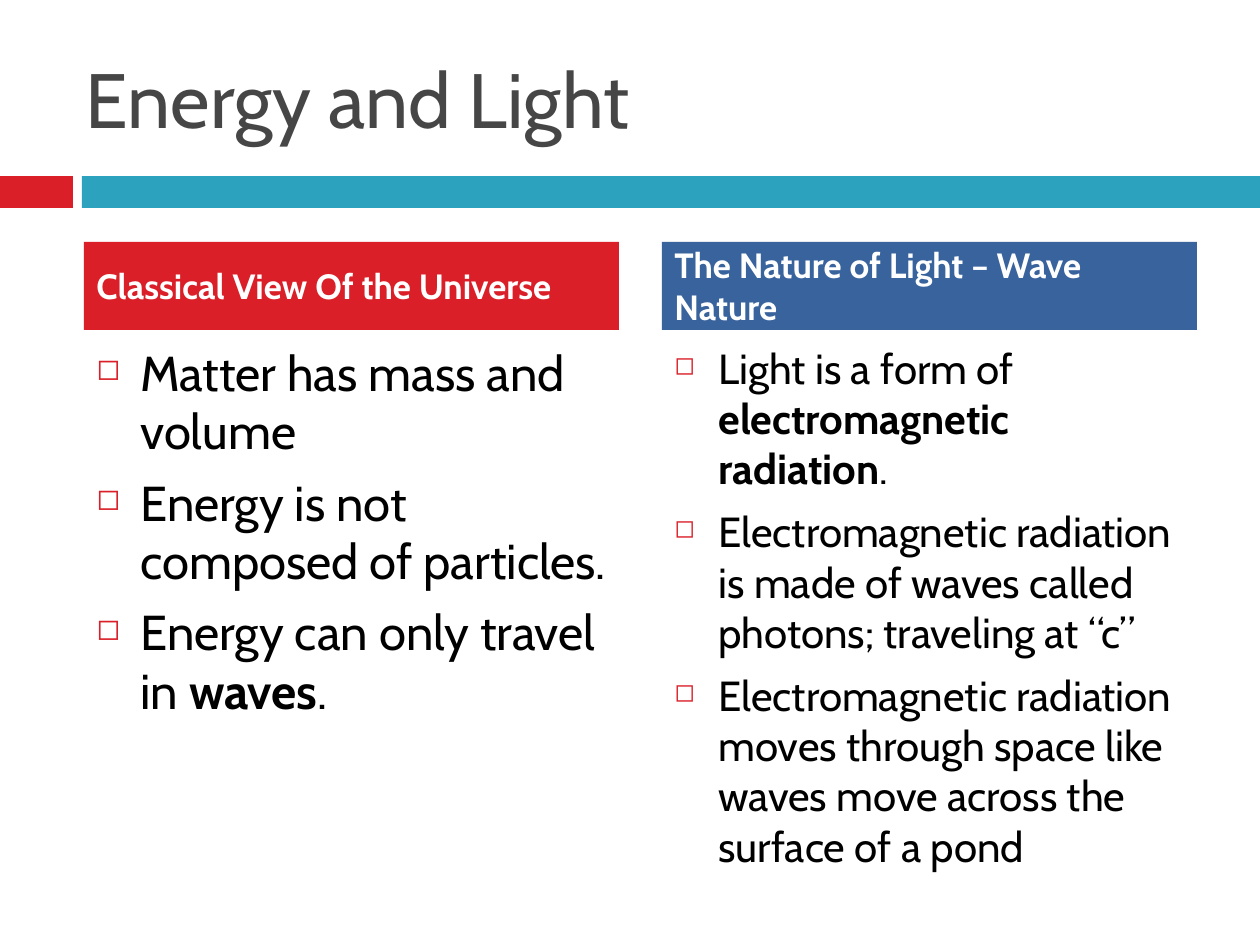
from dataclasses import dataclass

from lxml import etree
from pptx import Presentation
from pptx.dml.color import RGBColor
from pptx.enum.shapes import MSO_SHAPE
from pptx.enum.text import MSO_ANCHOR, MSO_AUTO_SIZE, PP_ALIGN
from pptx.oxml.ns import qn
from pptx.util import Emu, Pt

RECTANGLE = MSO_SHAPE.RECTANGLE
TOP, MIDDLE = MSO_ANCHOR.TOP, MSO_ANCHOR.MIDDLE
LEFT = PP_ALIGN.LEFT
NO_AUTOFIT = MSO_AUTO_SIZE.NONE
EMU_PER_INCH, PX_PER_INCH = 914400, 126
TITLE_ONLY = 5


@dataclass(frozen=True)
class Theme:
    font: str = "Cabin"
    red: str = "DA1F28"
    teal: str = "2DA2BF"
    blue: str = "39639D"
    gray: str = "464646"
    black: str = "000000"
    white: str = "FFFFFF"
    title_size: int = 44
    heading_size: int = 20
    space_before: int = 7
    bullet: str = "◻"
    bullet_percent: int = 60


@dataclass(frozen=True)
class Box:
    left: int
    top: int
    width: int
    height: int


@dataclass(frozen=True)
class Span:
    text: str
    bold: bool = False


@dataclass(frozen=True)
class Column:
    left: int
    heading: str
    color: str
    size: int
    points: list[list[Span]]


THEME = Theme()
SLIDE_WIDTH, SLIDE_HEIGHT = 1260, 945
TITLE_BOX = Box(73, 38, 1124, 120)
BAND_TOP, BAND_HEIGHT = 176, 32
BAND_SPLIT, BAND_GAP = 73, 9
COLUMN_WIDTH = 535
HEADING_TOP, HEADING_HEIGHT = 242, 88
BODY_TOP, BODY_HEIGHT = 336, 494
INDENT = 44

COLUMNS = [
    Column(84, "Classical View Of the Universe", THEME.red, 28, [
        [Span("Matter has mass and volume")],
        [Span("Energy is not composed of particles.")],
        [Span("Energy can only travel in "), Span("waves", True), Span(".")],
    ]),
    Column(662, "The Nature of Light – Wave Nature", THEME.blue, 24, [
        [Span("Light is a form of "), Span("electromagnetic radiation", True), Span(".")],
        [Span("Electromagnetic radiation is made of waves called photons; traveling at “c”")],
        [Span("Electromagnetic radiation moves through space like waves move across "
              "the surface of a pond")],
    ]),
]


def px(length: int) -> Emu:
    return Emu(round(length * EMU_PER_INCH / PX_PER_INCH))


def frame(box: Box) -> tuple[Emu, Emu, Emu, Emu]:
    return px(box.left), px(box.top), px(box.width), px(box.height)


def prepare_text(text_frame, anchor) -> None:
    text_frame.word_wrap = True
    text_frame.auto_size = NO_AUTOFIT
    text_frame.vertical_anchor = anchor


def style_paragraph(para, size: int, color: str, bold: bool = False) -> None:
    para.alignment = LEFT
    para.font.name = THEME.font
    para.font.size = Pt(size)
    para.font.bold = bold
    para.font.color.rgb = RGBColor.from_string(color)


def add_bullet(para) -> None:
    properties = para._p.get_or_add_pPr()
    properties.set("marL", str(px(INDENT)))
    properties.set("indent", str(-px(INDENT)))
    bullet_color = etree.SubElement(properties, qn("a:buClr"))
    etree.SubElement(bullet_color, qn("a:srgbClr"), val=THEME.red)
    etree.SubElement(properties, qn("a:buSzPct"), val=str(THEME.bullet_percent * 1000))
    etree.SubElement(properties, qn("a:buChar"), char=THEME.bullet)


def add_rectangle(slide, box: Box, color: str):
    shape = slide.shapes.add_shape(RECTANGLE, *frame(box))
    shape.shadow.inherit = False
    shape.fill.solid()
    shape.fill.fore_color.rgb = RGBColor.from_string(color)
    shape.line.fill.background()
    return shape


def add_title(slide, text: str) -> None:
    title = slide.shapes.title
    title.left, title.top, title.width, title.height = frame(TITLE_BOX)
    title.text = text
    prepare_text(title.text_frame, MIDDLE)
    style_paragraph(title.text_frame.paragraphs[0], THEME.title_size, THEME.gray)


def add_heading(slide, column: Column) -> None:
    box = Box(column.left, HEADING_TOP, COLUMN_WIDTH, HEADING_HEIGHT)
    text_frame = add_rectangle(slide, box, column.color).text_frame
    prepare_text(text_frame, MIDDLE)
    para = text_frame.paragraphs[0]
    para.text = column.heading
    para.space_before = Pt(THEME.space_before)
    style_paragraph(para, THEME.heading_size, THEME.white, bold=True)


def add_points(slide, column: Column) -> None:
    box = Box(column.left, BODY_TOP, COLUMN_WIDTH, BODY_HEIGHT)
    text_frame = slide.shapes.add_textbox(*frame(box)).text_frame
    prepare_text(text_frame, TOP)
    for index, point in enumerate(column.points):
        para = text_frame.add_paragraph() if index else text_frame.paragraphs[0]
        para.space_before = Pt(THEME.space_before)
        add_bullet(para)
        style_paragraph(para, column.size, THEME.black)
        for span in point:
            run = para.add_run()
            run.text = span.text
            if span.bold:
                run.font.bold = True


def main() -> None:
    deck = Presentation()
    deck.slide_width, deck.slide_height = px(SLIDE_WIDTH), px(SLIDE_HEIGHT)
    slide = deck.slides.add_slide(deck.slide_layouts[TITLE_ONLY])
    band_left = BAND_SPLIT + BAND_GAP
    add_rectangle(slide, Box(0, BAND_TOP, BAND_SPLIT, BAND_HEIGHT), THEME.red)
    add_rectangle(
        slide, Box(band_left, BAND_TOP, SLIDE_WIDTH - band_left, BAND_HEIGHT), THEME.teal
    )
    add_title(slide, "Energy and Light")
    for column in COLUMNS:
        add_points(slide, column)
        add_heading(slide, column)
    deck.save("out.pptx")


if __name__ == "__main__":
    main()
